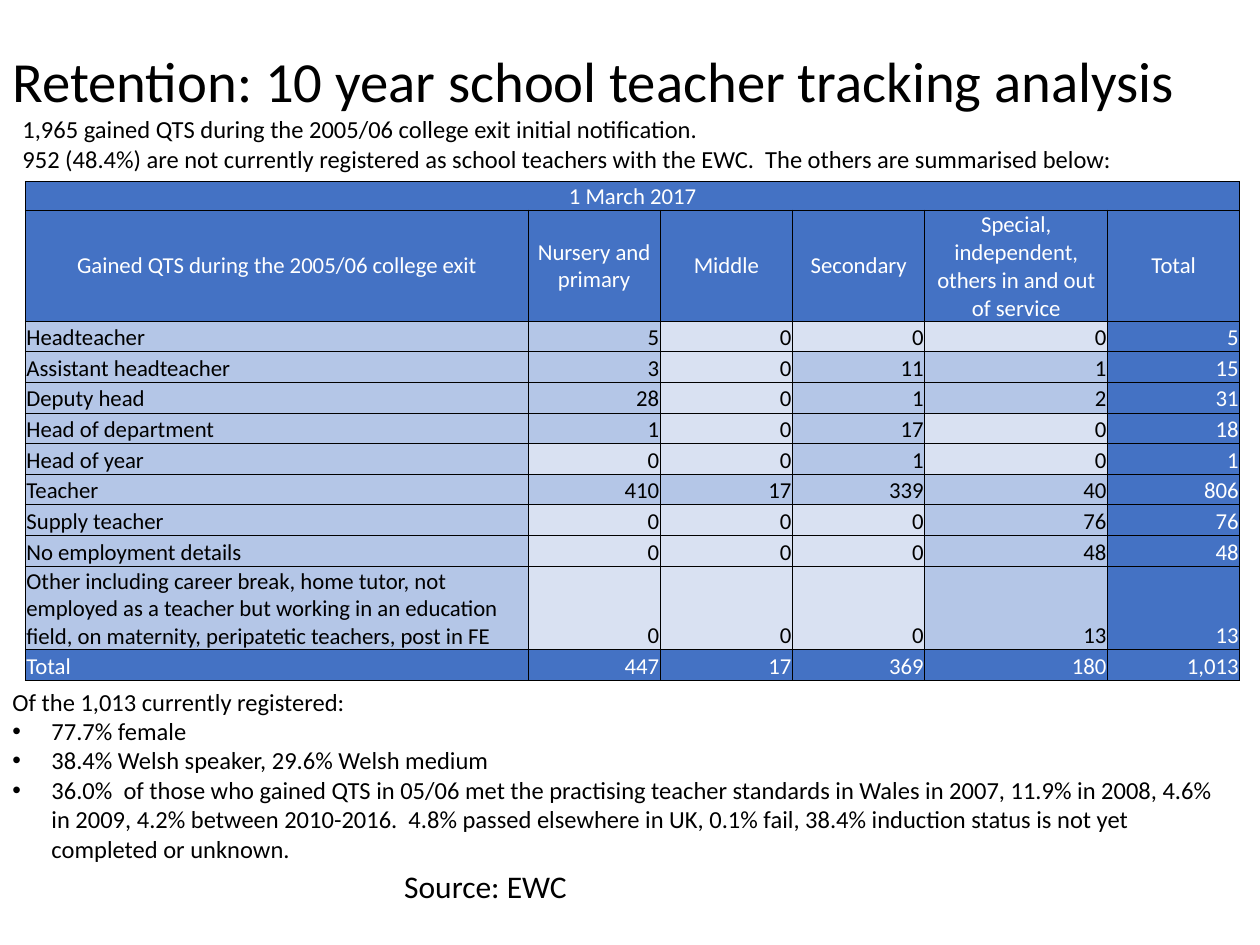
from lxml import etree
from pptx import Presentation, util as u
from pptx.dml import color
from pptx.enum import text
from pptx.oxml import ns

COLORS = {"ink": "000000", "white": "FFFFFF", "head": "4472C4", "value": "B4C6E7", "zero": "D9E1F2"}
LEFT, CENTER, RIGHT = text.PP_ALIGN.LEFT, text.PP_ALIGN.CENTER, text.PP_ALIGN.RIGHT
TOP, MIDDLE, BOTTOM = text.MSO_ANCHOR.TOP, text.MSO_ANCHOR.MIDDLE, text.MSO_ANCHOR.BOTTOM


class Deck:
    FONT = "Calibri"
    COLS, ROWS = 100, 75

    def __init__(self, width, height):
        self.prs = Presentation()
        self.prs.slide_width, self.prs.slide_height = u.Inches(width), u.Inches(height)
        self.s = self.prs.slides.add_slide(self.prs.slide_layouts[6])

    def x(self, cols):
        return round(self.prs.slide_width * cols / self.COLS)

    def y(self, rows):
        return round(self.prs.slide_height * rows / self.ROWS)

    def rgb(self, name):
        return color.RGBColor.from_string(COLORS[name])

    def run(self, p, words, size, ink="ink"):
        r = p.add_run()
        r.text = words
        r.font.name, r.font.size = self.FONT, u.Pt(size)
        r.font.color.rgb = self.rgb(ink)

    def bullet(self, p):
        pPr = p._p.get_or_add_pPr()
        pPr.set("marL", str(self.x(3.1)))
        pPr.set("indent", str(-self.x(3.1)))
        etree.SubElement(pPr, ns.qn("a:buFont")).set("typeface", "Arial")
        etree.SubElement(pPr, ns.qn("a:buChar")).set("char", "•")

    def box(self, left, top, width, height, lines, size, anchor=TOP, bullets=()):
        sp = self.s.shapes.add_textbox(self.x(left), self.y(top), self.x(width), self.y(height))
        tf = sp.text_frame
        tf.word_wrap, tf.vertical_anchor = True, anchor
        for i, line in enumerate([*lines, *bullets]):
            p = tf.add_paragraph() if i else tf.paragraphs[0]
            if i >= len(lines):
                self.bullet(p)
            self.run(p, line, size)

    def border(self, cell):
        tcPr = cell._tc.get_or_add_tcPr()
        for i, side in enumerate(("lnL", "lnR", "lnT", "lnB")):
            ln = etree.Element(ns.qn(f"a:{side}"), w=str(u.Pt(0.5)))
            fill = etree.SubElement(ln, ns.qn("a:solidFill"))
            etree.SubElement(fill, ns.qn("a:srgbClr")).set("val", COLORS["ink"])
            tcPr.insert(i, ln)

    def cell(self, cell, words, fill, align, anchor):
        cell.fill.solid()
        cell.fill.fore_color.rgb = self.rgb(fill)
        self.border(cell)
        cell.margin_left = cell.margin_right = cell.margin_top = u.Inches(0.01)
        cell.margin_bottom = 0
        cell.vertical_anchor = anchor
        p = cell.text_frame.paragraphs[0]
        p.alignment = align
        if words:
            self.run(p, words, 13, "white" if fill == "head" else "ink")

    def table(self, left, top, widths, heights, title, headers, body):
        frame = self.s.shapes.add_table(len(heights), len(widths), self.x(left), self.y(top),
                                        self.x(sum(widths)), self.y(sum(heights)))
        t = frame.table
        for col, width in zip(t.columns, widths):
            col.width = self.x(width)
        for row, height in zip(t.rows, heights):
            row.height = self.y(height)
        last_row, last_col = len(heights) - 1, len(widths) - 1
        for j, header in enumerate(headers):
            self.cell(t.cell(0, j), "" if j else title, "head", CENTER, MIDDLE)
            self.cell(t.cell(1, j), header, "head", CENTER, MIDDLE)
        t.cell(0, 0).merge(t.cell(0, last_col))
        for i, (label, *counts) in enumerate(body, 2):
            total = i == last_row
            self.cell(t.cell(i, 0), label, "head" if total else "value", LEFT, BOTTOM)
            for j, n in enumerate(counts, 1):
                fill = "head" if total or j == last_col else "value" if n else "zero"
                self.cell(t.cell(i, j), f"{n:,}", fill, RIGHT, BOTTOM)


HEADERS = ["Gained QTS during the 2005/06 college exit", "Nursery and primary", "Middle",
           "Secondary", "Special, independent, others in and out of service", "Total"]
ROLES = [
    ("Headteacher", 5, 0, 0, 0),
    ("Assistant headteacher", 3, 0, 11, 1),
    ("Deputy head", 28, 0, 1, 2),
    ("Head of department", 1, 0, 17, 0),
    ("Head of year", 0, 0, 1, 0),
    ("Teacher", 410, 17, 339, 40),
    ("Supply teacher", 0, 0, 0, 76),
    ("No employment details", 0, 0, 0, 48),
    ("Other including career break, home tutor, not employed as a teacher but working in an "
     "education field, on maternity, peripatetic teachers, post in FE", 0, 0, 0, 13),
]


def main():
    deck = Deck(10, 7.5)
    deck.box(0, 2.8, 98.5, 7.1, ["Retention: 10 year school teacher tracking analysis"], 32.4, MIDDLE)
    deck.box(0, 54, 98.5, 18.2, ["Of the 1,013 currently registered:"], 14, bullets=[
        "77.7% female",
        "38.4% Welsh speaker, 29.6% Welsh medium",
        "36.0%  of those who gained QTS in 05/06 met the practising teacher standards in Wales in 2007, "
        "11.9% in 2008, 4.6% in 2009, 4.2% between 2010-2016.  4.8% passed elsewhere in UK, 0.1% fail, "
        "38.4% induction status is not yet completed or unknown.",
    ])
    deck.box(0.8, 8.6, 97.6, 5.7, [
        "1,965 gained QTS during the 2005/06 college exit initial notification.",
        "952 (48.4%) are not currently registered as school teachers with the EWC.  "
        "The others are summarised below:",
    ], 14)
    deck.box(31.1, 68.3, 27.6, 4, ["Source: EWC"], 18)

    title_row, header_row, long_row = 2.2, 8.8, 6.6
    plain_row = (39.5 - title_row - header_row - long_row) / len(ROLES)
    heights = [title_row, header_row, *[plain_row] * (len(ROLES) - 1), long_row, plain_row]
    body = [(*role, sum(role[1:])) for role in ROLES]
    totals = [sum(column) for column in list(zip(*body))[1:]]
    deck.table(2, 14.4, [39.9, 10.5, 10.5, 10.5, 14.5, 10.5], heights,
               "1 March 2017", HEADERS, [*body, ("Total", *totals)])
    deck.prs.save("out.pptx")


if __name__ == "__main__":
    main()
